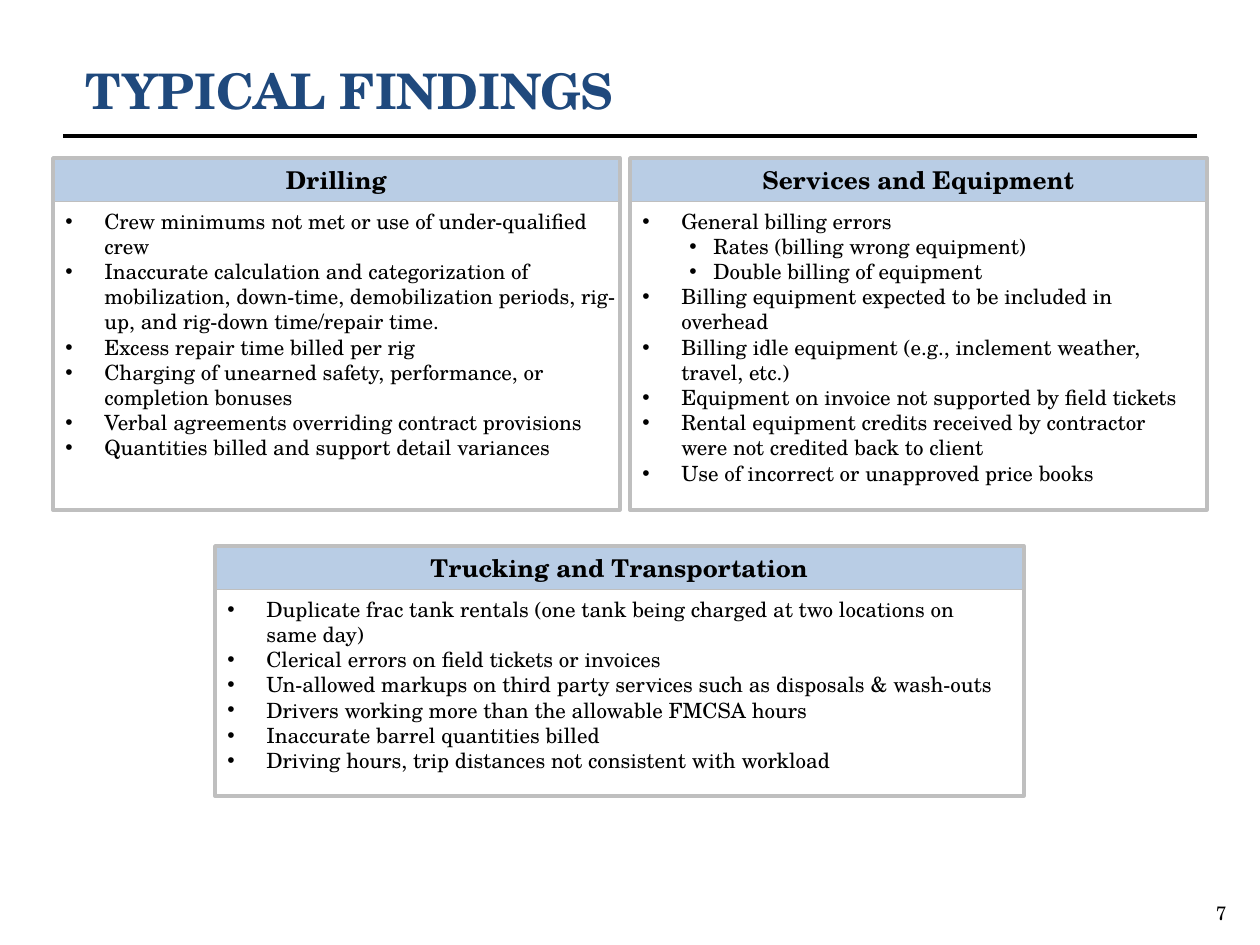
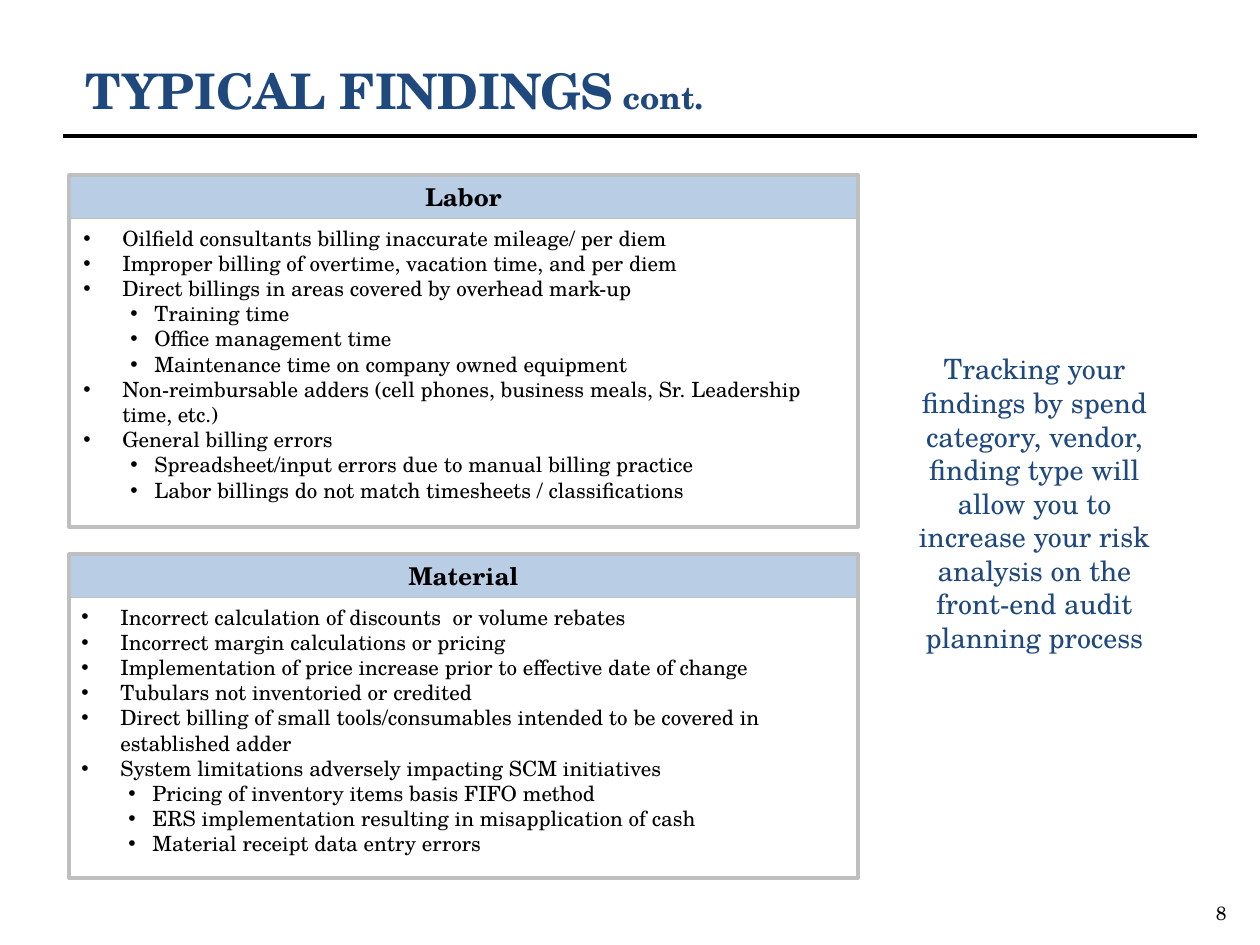
from dataclasses import dataclass

import pptx
import pptx.dml.color
import pptx.enum.shapes
import pptx.enum.text
import pptx.oxml.ns
import pptx.util
from lxml import etree

# Shared look
EMU_PER_PX = 914400 / 126
FONT = "TeX Gyre Schola"
NAVY, BLACK, WHITE = "1F497D", "000000", "FFFFFF"
HEADING_FILL, BORDER = "B9CDE5", "BFBFBF"
HEADING_HEIGHT = 43
ALIGN = pptx.enum.text.PP_ALIGN
ANCHOR = pptx.enum.text.MSO_ANCHOR


@dataclass(frozen=True)
class Finding:
    text: str
    details: tuple[str, ...] = ()


@dataclass(frozen=True)
class Panel:
    heading: str
    left: int
    top: int
    width: int
    height: int
    findings: tuple[Finding, ...]
    body_shift: int = 0
    body_extra: int = 0


@dataclass(frozen=True)
class Page:
    number: int
    title: str
    panels: tuple[Panel, ...]
    suffix: str = ""
    advice: str = ""


PAGES = (
    Page(7, "TYPICAL FINDINGS", (
        Panel("Drilling", 53, 158, 567, 352, (
            Finding("Crew minimums not met or use of under-qualified crew"),
            Finding("Inaccurate calculation and categorization of mobilization, down-time, "
                    "demobilization periods, rig-up, and rig-down time/repair time."),
            Finding("Excess repair time billed per rig"),
            Finding("Charging of unearned safety, performance, or completion bonuses"),
            Finding("Verbal agreements overriding contract provisions"),
            Finding("Quantities billed and support detail variances"),
        ), body_extra=10),
        Panel("Services and Equipment", 630, 158, 577, 352, (
            Finding("General billing errors",
                    ("Rates (billing wrong equipment)", "Double billing of equipment")),
            Finding("Billing equipment expected to be included in overhead"),
            Finding("Billing idle equipment (e.g., inclement weather, travel, etc.)"),
            Finding("Equipment on invoice not supported by field tickets"),
            Finding("Rental equipment credits received by contractor "
                    "were not credited back to client"),
            Finding("Use of incorrect or unapproved price books"),
        )),
        Panel("Trucking and Transportation", 215, 546, 809, 250, (
            Finding("Duplicate frac tank rentals "
                    "(one tank being charged at two locations on same day)"),
            Finding("Clerical errors on field tickets or invoices"),
            Finding("Un-allowed markups on third party services such as disposals & wash-outs"),
            Finding("Drivers working more than the allowable FMCSA hours"),
            Finding("Inaccurate barrel quantities billed"),
            Finding("Driving hours, trip distances not consistent with workload"),
        )),
    )),
    Page(8, "TYPICAL FINDINGS", (
        Panel("Labor", 69, 175, 789, 352, (
            Finding("Oilfield consultants billing inaccurate mileage/ per diem"),
            Finding("Improper billing of overtime, vacation time, and per diem"),
            Finding("Direct billings in areas covered by overhead mark-up",
                    ("Training time", "Office management time",
                     "Maintenance time on company owned equipment")),
            Finding("Non-reimbursable adders "
                    "(cell phones, business meals, Sr. Leadership time, etc.)"),
            Finding("General billing errors",
                    ("Spreadsheet/input errors due to manual billing practice",
                     "Labor billings do not match timesheets / classifications")),
        ), body_shift=2),
        Panel("Material", 69, 554, 789, 324, (
            Finding("Incorrect calculation of discounts  or volume rebates"),
            Finding("Incorrect margin calculations or pricing"),
            Finding("Implementation of price increase prior to effective date of change"),
            Finding("Tubulars not inventoried or credited"),
            Finding("Direct billing of small tools/consumables "
                    "intended to be covered in established adder"),
            Finding("System limitations adversely impacting SCM initiatives",
                    ("Pricing of inventory items basis FIFO method",
                     "ERS implementation resulting in misapplication of cash",
                     "Material receipt data entry errors")),
        )),
    ), suffix=" cont.",
        advice="Tracking your findings by spend category, vendor, finding type will allow you "
               "to increase your risk analysis on the front-end audit planning process"),
)


def px(length: int) -> int:
    return pptx.util.Emu(round(length * EMU_PER_PX))


def color(value: str) -> pptx.dml.color.RGBColor:
    return pptx.dml.color.RGBColor.from_string(value)


def style(font, size: int, ink: str = BLACK, bold: bool = False) -> None:
    font.name, font.size, font.bold = FONT, pptx.util.Pt(size), bold
    font.color.rgb = color(ink)


def add_box(slide, left: int, top: int, width: int, height: int,
            fill: str = "", border_pt: float = 0):
    box = slide.shapes.add_shape(pptx.enum.shapes.MSO_SHAPE.RECTANGLE,
                                 px(left), px(top), px(width), px(height))
    box.shadow.inherit = False
    if fill:
        box.fill.solid()
        box.fill.fore_color.rgb = color(fill)
    else:
        box.fill.background()
    if border_pt:
        box.line.color.rgb = color(BORDER)
        box.line.width = pptx.util.Pt(border_pt)
    else:
        box.line.fill.background()
    return box


def write_centred(box, text: str, size: int, ink: str, bold: bool) -> None:
    box.text_frame.word_wrap = True
    box.text_frame.vertical_anchor = ANCHOR.MIDDLE
    line = box.text_frame.paragraphs[0]
    line.text, line.alignment = text, ALIGN.CENTER
    style(line.font, size, ink, bold)


def add_text_box(slide, left: int, top: int, width: int, height: int):
    frame = slide.shapes.add_textbox(px(left), px(top), px(width), px(height)).text_frame
    frame.word_wrap = True
    return frame


def add_bullet(paragraph, text: str, level: int) -> None:
    margin, hanging = ((39, 39), (71, 24))[level]
    paragraph.text, paragraph.level = text, level
    props = paragraph._p.get_or_add_pPr()
    props.set("marL", str(px(margin)))
    props.set("indent", str(-px(hanging)))
    qn = pptx.oxml.ns.qn
    etree.SubElement(props, qn("a:buFont")).set("typeface", "Arial")
    etree.SubElement(props, qn("a:buChar")).set("char", "•")
    style(paragraph.font, 12)


def add_panel(slide, panel: Panel) -> None:
    heading = add_box(slide, panel.left, panel.top, panel.width, HEADING_HEIGHT,
                      HEADING_FILL, 0.25)
    write_centred(heading, panel.heading, 14, BLACK, True)
    add_box(slide, panel.left, panel.top, panel.width, panel.height, border_pt=2)

    # Findings, each followed by its details
    rows = [row for finding in panel.findings
            for row in [(finding.text, 0), *((detail, 1) for detail in finding.details)]]
    body_top = HEADING_HEIGHT + 1
    body = add_text_box(slide, panel.left + panel.body_shift, panel.top + body_top,
                        panel.width + panel.body_extra, panel.height - body_top)
    for index, (text, level) in enumerate(rows):
        add_bullet(body.add_paragraph() if index else body.paragraphs[0], text, level)


def add_title(slide, page: Page) -> None:
    title = slide.shapes.title
    title.left, title.top, title.width, title.height = px(73), px(53), px(969), px(73)
    frame = title.text_frame
    frame.auto_size = pptx.enum.text.MSO_AUTO_SIZE.NONE
    frame.vertical_anchor = ANCHOR.MIDDLE
    heading = frame.paragraphs[0]
    heading.alignment = ALIGN.LEFT
    style(heading.font, 28, NAVY, True)
    for text, size in ((page.title, 28), (page.suffix, 18)):
        if text:
            run = heading.add_run()
            run.text = text
            run.font.size = pptx.util.Pt(size)


def add_rule(slide) -> None:
    rule = slide.shapes.add_connector(pptx.enum.shapes.MSO_CONNECTOR.STRAIGHT,
                                      px(63), px(136), px(1197), px(136))
    rule.line.color.rgb = color(BLACK)
    rule.line.width = pptx.util.Pt(2.5)
    etree.SubElement(rule._element.spPr, pptx.oxml.ns.qn("a:effectLst"))


def add_page_number(slide, number: int) -> None:
    footer = add_text_box(slide, 1176, 895, 63, 50).paragraphs[0]
    footer.text, footer.alignment = str(number), ALIGN.RIGHT
    style(footer.font, 11)


def main() -> None:
    deck = pptx.Presentation()
    deck.slide_width, deck.slide_height = px(1260), px(945)
    title_only = deck.slide_layouts[5]
    for page in PAGES:
        slide = deck.slides.add_slide(title_only)
        add_rule(slide)
        add_title(slide, page)
        for panel in page.panels:
            add_panel(slide, panel)
        add_page_number(slide, page.number)
        if page.advice:
            advice = add_box(slide, 902, 344, 265, 318, WHITE)
            write_centred(advice, page.advice, 16, NAVY, False)
    deck.save("out.pptx")


if __name__ == "__main__":
    main()
